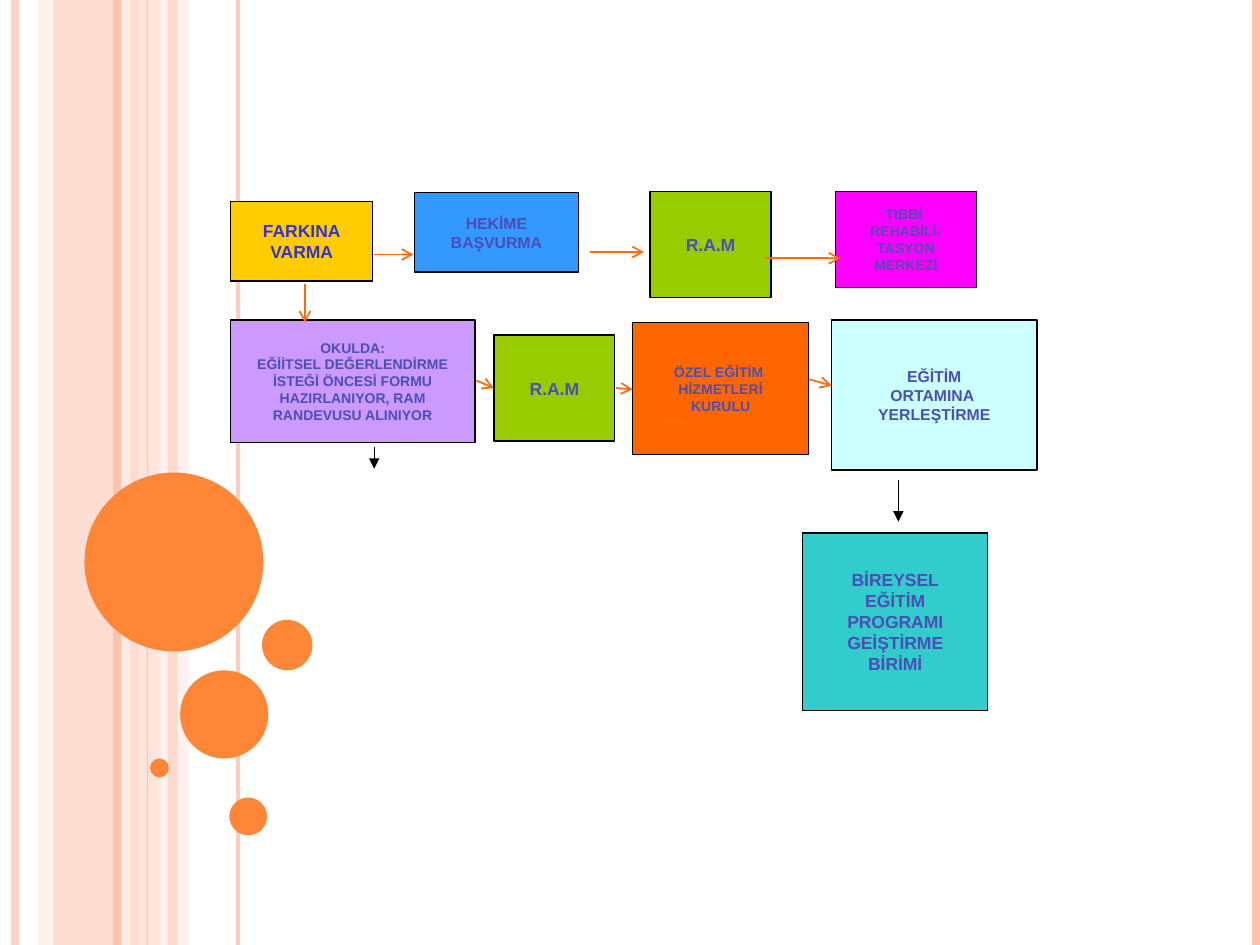
from dataclasses import dataclass

import pptx
import pptx.dml.color
import pptx.enum.shapes
import pptx.enum.text
import pptx.oxml
import pptx.oxml.ns
import pptx.util
from pptx.util import Inches

SHAPE = pptx.enum.shapes.MSO_SHAPE


@dataclass(frozen=True)
class Theme:
    font: str = "Arial"
    ink: str = "4B4EB5"
    ink_start: str = "3333CC"
    outline: str = "000000"
    arrow: str = "FF6B0A"
    circle: str = "FE8637"
    stripe: str = "FEC3AE"
    stripe_light: str = "FFD9CE"
    stripe_pale: str = "FFEDE8"
    large: float = 10
    medium: float = 9
    small: float = 8
    thin: float = 0.75
    arrow_width: float = 1


@dataclass(frozen=True)
class Box:
    left: float
    top: float
    width: float
    height: float

    def inner(self, x, y, width, height):
        return Box(self.left + x, self.top + y, width, height)

    def lengths(self):
        return [Inches(v) for v in (self.left, self.top, self.width, self.height)]


THEME = Theme()

# Kind, x (left edge of a band, centre of a line), width (inches or points), colour, opacity
STRIPES = [
    ("band", 0.42, 0.67, THEME.stripe, 54),
    ("band", 0.3, 0.11, THEME.stripe_light, 36),
    ("band", 1.08, 0.2, THEME.stripe_light, 70),
    ("band", 1.25, 0.25, THEME.stripe_pale, 71),
    ("line", 0.12, 4.5, THEME.stripe, 73),
    ("line", 1, 4.5, THEME.stripe_pale, 83),
    ("line", 0.93, 4.5, THEME.stripe, 100),
    ("line", 1.89, 2.25, THEME.stripe, 82),
    ("line", 1.17, 0.75, THEME.stripe, 100),
    ("line", 9.97, 4.5, THEME.stripe, 100),
    ("band", 1.33, 0.08, THEME.stripe, 51),
]

# x, y, diameter
CIRCLES = [(0, 0, 1.42), (0.76, 1.57, 0.7), (0.52, 2.27, 0.15),
           (1.15, 2.58, 0.3), (1.41, 1.17, 0.4)]

# Place within the flow, fill, type size, text colour, paragraphs
STEPS = [
    ((0, 0.08, 1.13, 0.63), "FFCC00", THEME.large, THEME.ink_start,
     ["FARKINA", "VARMA"]),
    ((1.46, 0.01, 1.3, 0.63), "3399FF", THEME.medium, THEME.ink,
     ["HEKİME", "BAŞVURMA"]),
    ((3.33, 0, 0.96, 0.84), "99CC00", THEME.large, THEME.ink, ["R.A.M"]),
    ((4.8, 0, 1.12, 0.76), "FF00FF", THEME.small, THEME.ink,
     ["TIBBİ ", "REHABİLİ-TASYON MERKEZİ"]),
    ((0, 1.02, 1.94, 0.97), "CC99FF", THEME.small, THEME.ink,
     ["OKULDA:", "EĞİİTSEL DEĞERLENDİRME İSTEĞİ ÖNCESİ FORMU "
      "HAZIRLANIYOR, RAM RANDEVUSU ALINIYOR"]),
    ((2.09, 1.14, 0.96, 0.84), "99CC00", THEME.large, THEME.ink, ["R.A.M"]),
    ((3.19, 1.04, 1.4, 1.05), "FF6600", THEME.small, THEME.ink,
     ["ÖZEL EĞİTİM ", "HİZMETLERİ", "KURULU"]),
    ((4.77, 1.02, 1.63, 1.19), "CCFFFF", THEME.medium, THEME.ink,
     ["EĞİTİM", "ORTAMINA ", "YERLEŞTİRME"]),
    ((4.54, 2.71, 1.47, 1.41), "33CCCC", THEME.large, THEME.ink,
     ["BİREYSEL", "EĞİTİM", "PROGRAMI", "GEİŞTİRME", "BİRİMİ"]),
]

# Start x, y and end x, y within the flow
ORANGE_ARROWS = [
    (1.14, 0.5, 1.45, 0.5), (2.85, 0.48, 3.28, 0.48), (4.24, 0.53, 4.84, 0.53),
    (3.45, 1.84, 3.59, 1.84), (0.59, 0.73, 0.59, 1.04), (1.95, 1.5, 2.09, 1.56),
    (3.06, 1.56, 3.19, 1.57), (4.59, 1.49, 4.77, 1.54),
]
BLACK_ARROWS = [(1.14, 2.03, 1.14, 2.2), (5.3, 2.29, 5.3, 2.62)]


def rgb(color):
    return pptx.dml.color.RGBColor.from_string(color)


def set_opacity(parent, percent):
    for color in parent.iter(pptx.oxml.ns.qn("a:srgbClr")):
        alpha = color.makeelement(pptx.oxml.ns.qn("a:alpha"), {"val": str(percent * 1000)})
        color.append(alpha)


def add_filled(slide, kind, box, color):
    shape = slide.shapes.add_shape(kind, *box.lengths())
    shape.shadow.inherit = False
    shape.fill.solid()
    shape.fill.fore_color.rgb = rgb(color)
    shape.line.fill.background()
    return shape


def add_line(slide, ends, color, width, head=None):
    line = slide.shapes.add_connector(
        pptx.enum.shapes.MSO_CONNECTOR.STRAIGHT, *[Inches(v) for v in ends])
    line.line.color.rgb = rgb(color)
    line.line.width = pptx.util.Pt(width)
    properties = line._element.spPr
    if head:
        outline = properties.find(pptx.oxml.ns.qn("a:ln"))
        outline.append(outline.makeelement(pptx.oxml.ns.qn("a:tailEnd"), {"type": head}))
    properties.append(properties.makeelement(pptx.oxml.ns.qn("a:effectLst"), {}))
    return line


def add_stripes(slide, box):
    for kind, x, width, color, opacity in STRIPES:
        if kind == "band":
            stripe = add_filled(slide, SHAPE.RECTANGLE,
                                box.inner(x, 0, width, box.height), color)
        else:
            x += box.left
            stripe = add_line(slide, (x, box.top, x, box.top + box.height), color, width)
        if opacity < 100:
            set_opacity(stripe._element.spPr, opacity)


def add_circles(slide, box):
    for x, y, size in CIRCLES:
        add_filled(slide, SHAPE.OVAL, box.inner(x, y, size, size), THEME.circle)


def add_step(slide, box, fill, size, ink, lines):
    step = add_filled(slide, SHAPE.RECTANGLE, box, fill)
    step.line.color.rgb = rgb(THEME.outline)
    step.line.width = pptx.util.Pt(THEME.thin)
    frame = step.text_frame
    frame.word_wrap = True
    frame.vertical_anchor = pptx.enum.text.MSO_ANCHOR.MIDDLE
    frame.margin_left = frame.margin_right = Inches(0.07)
    frame.margin_top = frame.margin_bottom = Inches(0.03)
    for index, line in enumerate(lines):
        para = frame.add_paragraph() if index else frame.paragraphs[0]
        para.alignment = pptx.enum.text.PP_ALIGN.CENTER
        span = para.add_run()
        span.text = line
        span.font.name = THEME.font
        span.font.size = pptx.util.Pt(size)
        span.font.bold = True
        span.font.color.rgb = rgb(ink)


def add_flow(slide, box):
    for place, fill, size, ink, lines in STEPS:
        add_step(slide, box.inner(*place), fill, size, ink, lines)
    for arrows, color, width, head in (
            (BLACK_ARROWS, THEME.outline, THEME.thin, "triangle"),
            (ORANGE_ARROWS, THEME.arrow, THEME.arrow_width, "arrow")):
        for x1, y1, x2, y2 in arrows:
            ends = (box.left + x1, box.top + y1, box.left + x2, box.top + y2)
            add_line(slide, ends, color, width, head)


def main():
    deck = pptx.Presentation()
    deck.slide_width, deck.slide_height = Inches(10), Inches(7.5)
    slide = deck.slides.add_slide(deck.slide_layouts[6])
    add_stripes(slide, Box(0, 0, 10, 7.5))
    add_circles(slide, Box(0.67, 3.75, 1.81, 2.88))
    add_flow(slide, Box(1.83, 1.52, 6.4, 4.12))
    deck.save("out.pptx")


if __name__ == "__main__":
    main()
